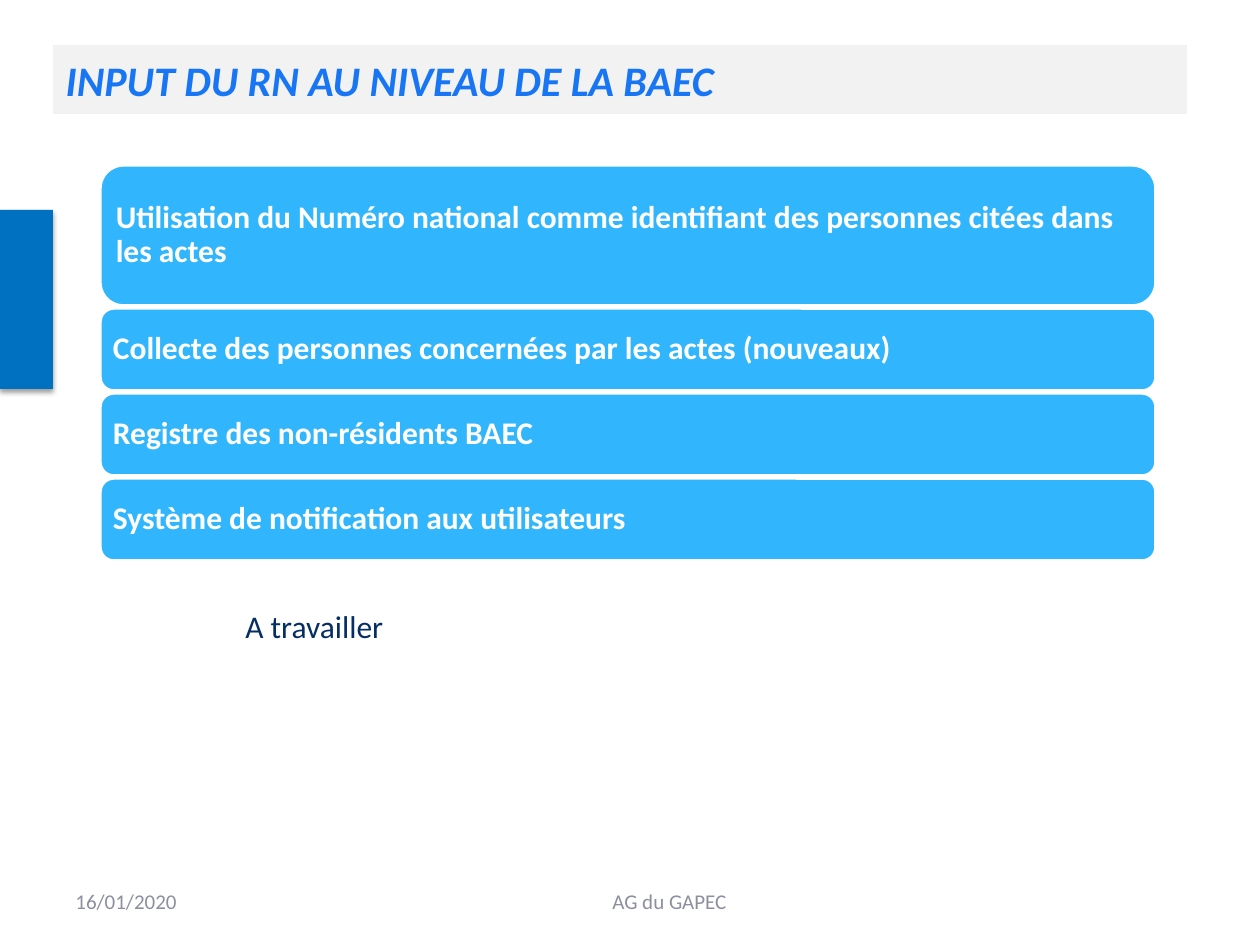
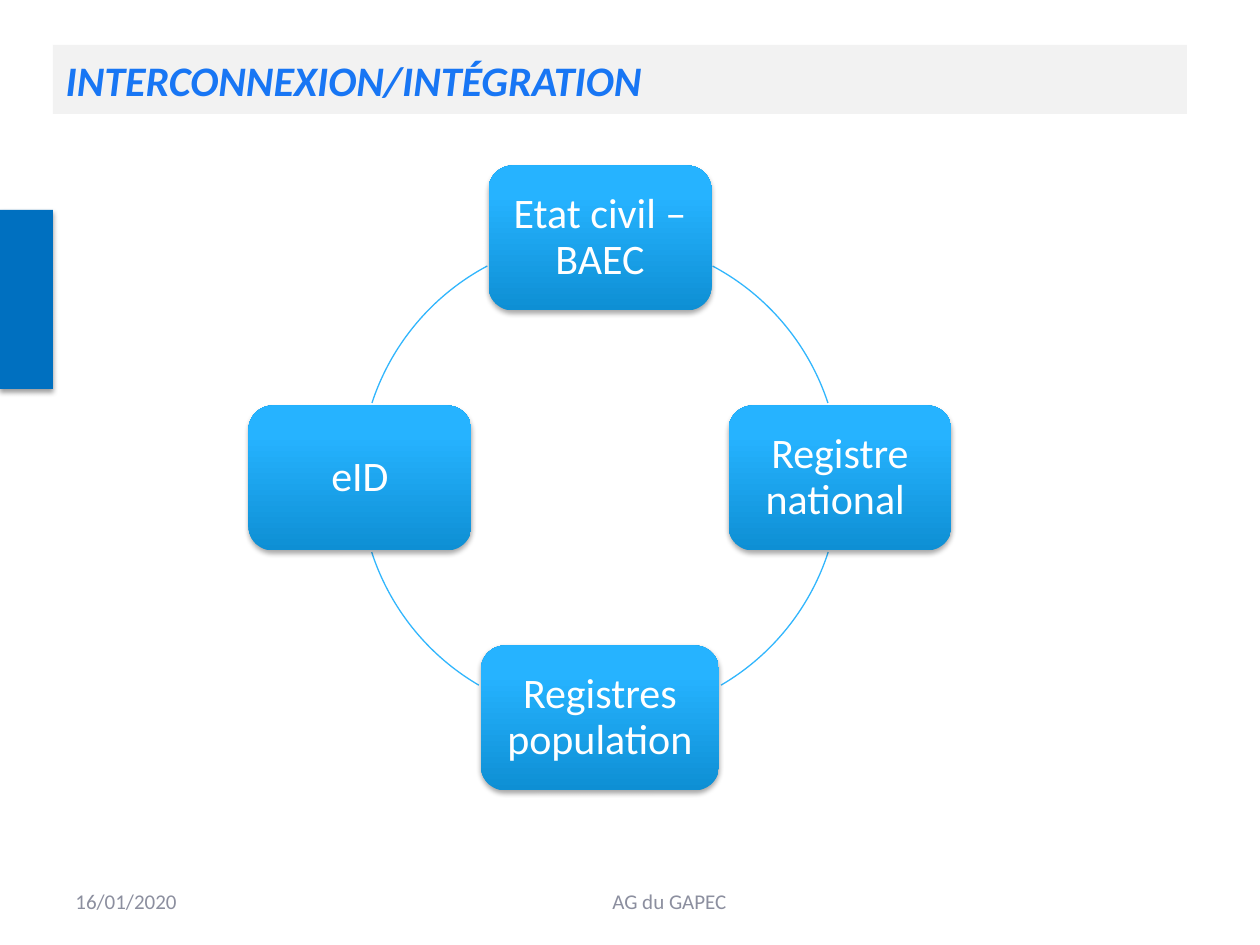
"""Build two slides on the national register: its inputs to the BAEC and the interconnection ring."""
import lxml.etree
import pptx
import pptx.dml.color
import pptx.enum.shapes
import pptx.enum.text
import pptx.oxml
import pptx.oxml.ns
import pptx.util

PX = 914400 / 126
SHAPES = pptx.enum.shapes.MSO_SHAPE
ALIGN = pptx.enum.text.PP_ALIGN
MIDDLE = pptx.enum.text.MSO_ANCHOR.MIDDLE

TITLES = ["INPUT DU RN AU NIVEAU DE LA BAEC", "INTERCONNEXION/INTÉGRATION"]
FOOTERS = [
    ("16/01/2020", (63, 876, 294, 50), ALIGN.LEFT),
    ("AG du GAPEC", (372, 876, 595, 50), ALIGN.CENTER),
]
INPUTS = [
    ("Utilisation du Numéro national comme identifiant des personnes citées dans les actes", 165, 141),
    ("Collecte des personnes concernées par les actes (nouveaux)", 308, 83),
    ("Registre des non-résidents BAEC", 393, 83),
    ("Système de notification aux utilisateurs", 478, 83),
]
RING_X, RING_Y, RING_RADIUS = 600, 478, 240
NODE_HEIGHT = 145
NODES = [
    ("Etat civil – BAEC", 0, -1, 223),
    ("Registre national ", 1, 0, 223),
    ("Registres population", 0, 1, 238),
    ("eID", -1, 0, 223),
]
ARCS = [(298, 341.8), (18, 59.7), (120.3, 162), (198.2, 242)]

TITLE_FONT = {"size": 24, "color": "1876F4", "bold": True, "italic": True}
FOOTER_FONT = {"size": 12, "color": "8C8F9F"}
INPUT_FONT = {"size": 18, "color": "FFFFFF", "bold": True}
NOTE_FONT = {"size": 18, "color": "052E65"}
NODE_FONT = {"size": 24, "color": "FFFFFF"}


def rgb(value):
    return pptx.dml.color.RGBColor.from_string(value)


def write(shape, text, font, alignment=ALIGN.LEFT, spacing=1.0, inset=None, wrap=True):
    frame = shape.text_frame
    frame.text = text
    frame_format = {"word_wrap": wrap, "vertical_anchor": MIDDLE}
    if inset is not None:
        for side in ("left", "top", "right", "bottom"):
            frame_format[f"margin_{side}"] = round(inset * PX)
    for name, value in frame_format.items():
        setattr(frame, name, value)
    paragraph = frame.paragraphs[0]
    paragraph.alignment = alignment
    paragraph.line_spacing = spacing
    run_font = paragraph.runs[0].font
    font_format = {"name": "Calibri", **font, "size": pptx.util.Pt(font["size"])}
    run_font.color.rgb = rgb(font_format.pop("color"))
    for name, value in font_format.items():
        setattr(run_font, name, value)


presentation = pptx.Presentation()
presentation.slide_width = round(1260 * PX)
presentation.slide_height = round(945 * PX)
shadowed = []

for title_text in TITLES:
    slide = presentation.slides.add_slide(presentation.slide_layouts[5])
    title = slide.shapes.title
    for name, value in {"left": 53, "top": 45, "width": 1134, "height": 69}.items():
        setattr(title, name, round(value * PX))
    title.fill.solid()
    title.fill.fore_color.rgb = rgb("F2F2F2")
    write(title, title_text, TITLE_FONT)

    band = slide.shapes.add_shape(SHAPES.RECTANGLE, *[round(v * PX) for v in (0, 210, 53, 179)])
    band.fill.solid()
    band.fill.fore_color.rgb = rgb("0070C0")
    band.line.fill.background()
    shadowed.append((band, 38))

    for text, box, alignment in FOOTERS:
        footer = slide.shapes.add_textbox(*[round(v * PX) for v in box])
        write(footer, text, FOOTER_FONT, alignment)

inputs_slide, ring_slide = presentation.slides

for text, top, height in INPUTS:
    box = [round(v * PX) for v in (100, top, 1056, height)]
    card = inputs_slide.shapes.add_shape(SHAPES.ROUNDED_RECTANGLE, *box)
    card.shadow.inherit = False
    card.fill.solid()
    card.fill.fore_color.rgb = rgb("31B6FD")
    card.line.color.rgb = rgb("FFFFFF")
    card.line.width = pptx.util.Pt(2)
    write(card, text, INPUT_FONT, spacing=0.9, inset=9)

note = inputs_slide.shapes.add_textbox(*[round(v * PX) for v in (233, 601, 165, 50)])
write(note, "A travailler", NOTE_FONT, wrap=False)

ring_box = (RING_X - RING_RADIUS, RING_Y - RING_RADIUS, 2 * RING_RADIUS, 2 * RING_RADIUS)
for start, end in ARCS:
    arc = ring_slide.shapes.add_shape(SHAPES.ARC, *[round(v * PX) for v in ring_box])
    arc.shadow.inherit = False
    arc.adjustments[0] = start * 0.6
    arc.adjustments[1] = end * 0.6
    arc.fill.background()
    arc.line.color.rgb = rgb("31B6FD")
    arc.line.width = pptx.util.Pt(0.75)

for text, across, down, width in NODES:
    left = RING_X + across * RING_RADIUS - width / 2
    top = RING_Y + down * RING_RADIUS - NODE_HEIGHT / 2
    box = [round(v * PX) for v in (left, top, width, NODE_HEIGHT)]
    node = ring_slide.shapes.add_shape(SHAPES.ROUNDED_RECTANGLE, *box)
    node.fill.gradient()
    node.fill.gradient_angle = 90
    for stop, position, color in zip(node.fill.gradient_stops, (0, 0.8), ("0E8FD4", "26B3FF")):
        stop.position = position
        stop.color.rgb = rgb(color)
    node.line.fill.background()
    write(node, text, NODE_FONT, ALIGN.CENTER, spacing=0.9, inset=13)
    shadowed.append((node, 35))

for shape, opacity in shadowed:
    shape.shadow.inherit = False
    effects = shape.element.spPr.find(pptx.oxml.ns.qn("a:effectLst"))
    shadow = lxml.etree.SubElement(
        effects, pptx.oxml.ns.qn("a:outerShdw"),
        blurRad=str(pptx.util.Pt(3.1)), dist=str(pptx.util.Pt(1.7)), dir="5400000", rotWithShape="0")
    color = lxml.etree.SubElement(shadow, pptx.oxml.ns.qn("a:srgbClr"), val="000000")
    lxml.etree.SubElement(color, pptx.oxml.ns.qn("a:alpha"), val=str(opacity * 1000))

presentation.save("out.pptx")
